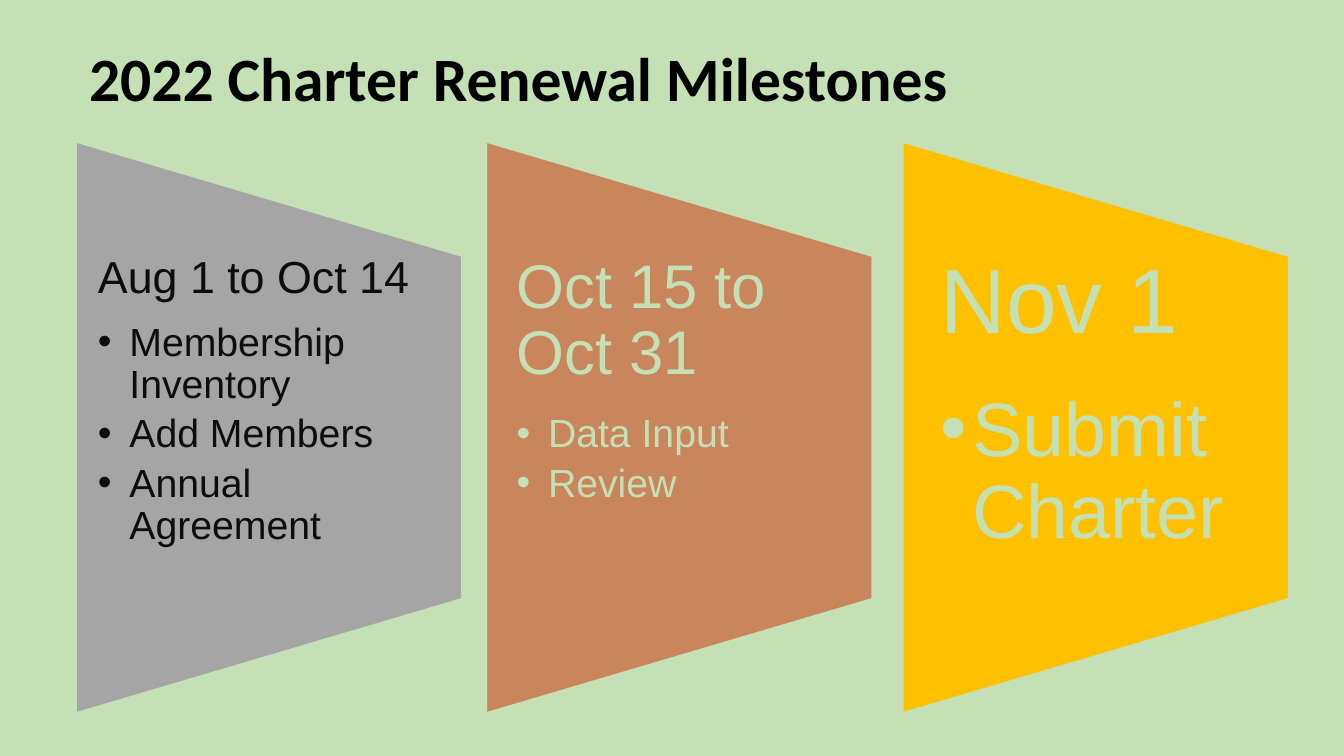
from dataclasses import dataclass

from lxml.etree import SubElement
from pptx import Presentation
from pptx.dml.color import RGBColor
from pptx.enum.shapes import MSO_SHAPE
from pptx.enum.text import MSO_ANCHOR
from pptx.oxml.ns import qn
from pptx.slide import Slide
from pptx.text.text import TextFrame, _Paragraph
from pptx.util import Length, Pt

PALE_GREEN = RGBColor(0xC5, 0xE0, 0xB4)
GREY = RGBColor(0xA5, 0xA5, 0xA5)
COPPER = RGBColor(0xC9, 0x86, 0x5C)
GOLD = RGBColor(0xFF, 0xC0, 0x00)
NEAR_BLACK = RGBColor(0x0D, 0x0D, 0x0D)
BLACK = RGBColor(0, 0, 0)

PANEL_WIDTH = Pt(276.5)
PANEL_HEIGHT = Pt(409)
PANEL_MIDDLE = Pt(305.3)
TEXT_TOP = Pt(182.2)
TEXT_HEIGHT = Pt(245.5)
BULLET_INDENT = Pt(22.5)
HEADING_GAP = 0.42
TASK_GAP = 0.18


@dataclass(frozen=True)
class Milestone:
    left: Length
    fill: RGBColor
    ink: RGBColor
    inset: Length
    period: str
    period_size: int
    tasks: tuple[str, ...]
    task_size: int


MILESTONES = (
    Milestone(Pt(54), GREY, NEAR_BLACK, Pt(16), "Aug 1 to Oct 14", 32,
              ("Membership Inventory", "Add Members", "Annual Agreement"), 28),
    Milestone(Pt(347), COPPER, PALE_GREEN, Pt(22), "Oct 15 to Oct 31", 44,
              ("Data Input", "Review"), 28),
    Milestone(Pt(644.4), GOLD, PALE_GREEN, Pt(27.5), "Nov 1", 65,
              ("Submit Charter",), 54),
)


def add_text_frame(slide: Slide, left: Length, top: Length, width: Length,
                   height: Length, side: Length, edge: Length) -> TextFrame:
    frame = slide.shapes.add_textbox(left, top, width, height).text_frame
    frame.word_wrap = True
    frame.margin_left = frame.margin_right = side
    frame.margin_top = frame.margin_bottom = edge
    return frame


def write(paragraph: _Paragraph, text: str, size: int, color: RGBColor,
          face: str = "Arial", bold: bool = False, gap: float = 0) -> None:
    paragraph.text = text
    paragraph.line_spacing = 0.9
    paragraph.space_after = Pt(round(size * gap, 1))
    font = paragraph.font
    font.name = face
    font.size = Pt(size)
    font.bold = bold
    font.color.rgb = color


def add_bullet(paragraph: _Paragraph) -> None:
    paragraph.level = 1
    properties = paragraph._p.get_or_add_pPr()
    properties.set("marL", str(BULLET_INDENT))
    properties.set("indent", str(-BULLET_INDENT))
    SubElement(properties, qn("a:buFont"), typeface="Arial")
    SubElement(properties, qn("a:buChar"), char="•")


def add_title(slide: Slide, title: str) -> None:
    frame = add_text_frame(slide, Pt(60), Pt(6), Pt(828), Pt(104.4), Pt(3.6), Pt(3.6))
    frame.vertical_anchor = MSO_ANCHOR.MIDDLE
    write(frame.paragraphs[0], title, 44, BLACK, "Calibri", bold=True)


def add_milestone(slide: Slide, milestone: Milestone) -> None:
    center = milestone.left + PANEL_WIDTH // 2
    panel = slide.shapes.add_shape(
        MSO_SHAPE.FLOWCHART_MANUAL_OPERATION,
        center - PANEL_HEIGHT // 2, PANEL_MIDDLE - PANEL_WIDTH // 2,
        PANEL_HEIGHT, PANEL_WIDTH)
    panel.rotation = 270
    panel.shadow.inherit = False
    panel.fill.solid()
    panel.fill.fore_color.rgb = milestone.fill
    panel.line.color.rgb = PALE_GREEN
    panel.line.width = Pt(2)

    frame = add_text_frame(slide, milestone.left, TEXT_TOP, PANEL_WIDTH,
                           TEXT_HEIGHT, milestone.inset, Pt(0))
    write(frame.paragraphs[0], milestone.period, milestone.period_size,
          milestone.ink, gap=HEADING_GAP)
    for task in milestone.tasks:
        paragraph = frame.add_paragraph()
        add_bullet(paragraph)
        write(paragraph, task, milestone.task_size, milestone.ink, gap=TASK_GAP)


def main() -> None:
    presentation = Presentation()
    presentation.slide_width = Pt(960)
    presentation.slide_height = Pt(540)
    slide = presentation.slides.add_slide(presentation.slide_layouts[6])
    slide.background.fill.solid()
    slide.background.fill.fore_color.rgb = PALE_GREEN
    add_title(slide, "2022 Charter Renewal Milestones")
    for milestone in MILESTONES:
        add_milestone(slide, milestone)
    presentation.save("out.pptx")


if __name__ == "__main__":
    main()
